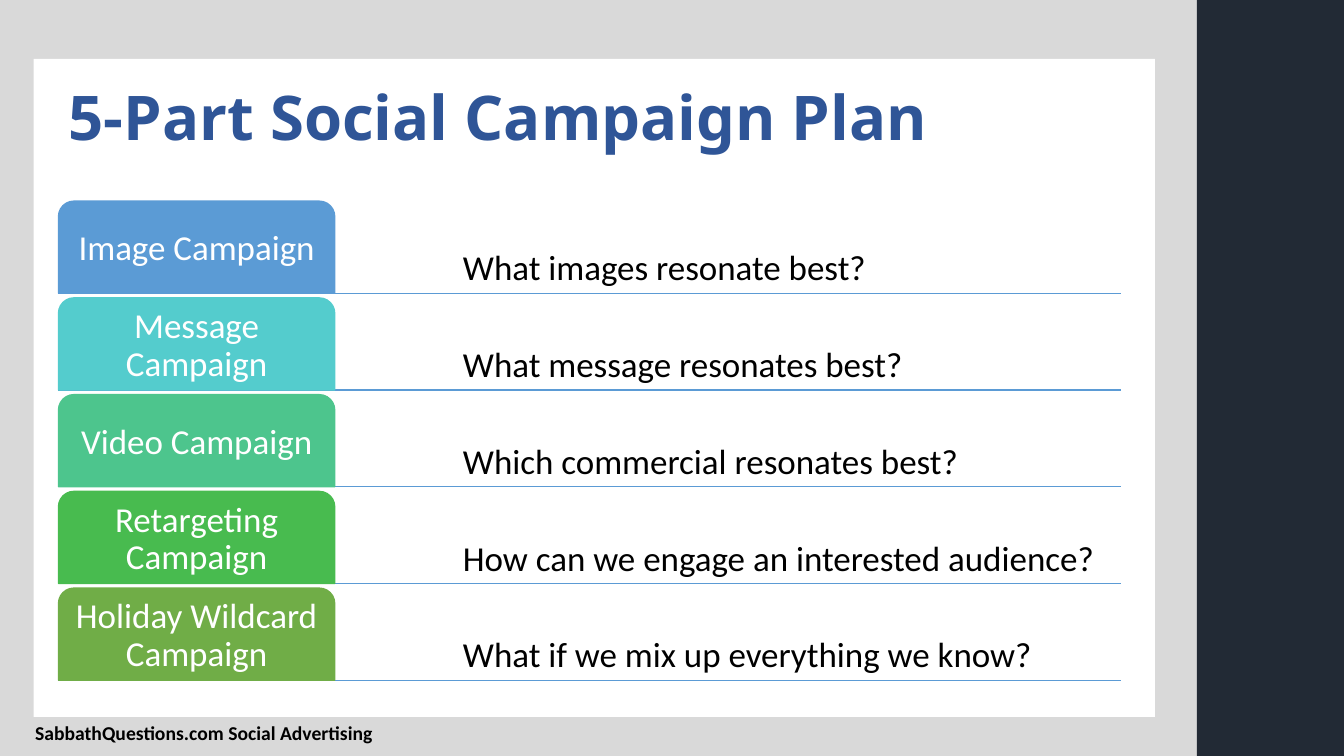
from lxml import etree
from pptx import Presentation
from pptx import util as u
from pptx.dml.color import RGBColor
from pptx.enum import shapes, text
from pptx.oxml import ns

BLACK = RGBColor(0x00, 0x00, 0x00)
WHITE = RGBColor(0xFF, 0xFF, 0xFF)
GRAY = RGBColor(0xD9, 0xD9, 0xD9)
NAVY = RGBColor(0x22, 0x2A, 0x35)
TITLE_BLUE = RGBColor(0x2F, 0x55, 0x97)
BLUE = RGBColor(0x5B, 0x9B, 0xD5)
CYAN = RGBColor(0x54, 0xCC, 0xCD)
TEAL = RGBColor(0x4D, 0xC5, 0x8D)
GREEN = RGBColor(0x48, 0xBB, 0x4F)
OLIVE = RGBColor(0x70, 0xAD, 0x47)

CAMPAIGNS = [
    ("Image Campaign", "What images resonate best?", BLUE),
    ("Message Campaign", "What message resonates best?", CYAN),
    ("Video Campaign", "Which commercial resonates best?", TEAL),
    ("Retargeting Campaign", "How can we engage an interested audience?", GREEN),
    ("Holiday Wildcard Campaign", "What if we mix up everything we know?", OLIVE),
]
LABEL_WIDTH = 197.3
ROW_GAP = 3.3
QUESTION_TAB = 88


def add_panel(slide, kind, box, color):
    """Add a filled shape without outline or shadow."""
    shape = slide.shapes.add_shape(kind, *map(u.Pt, box))
    shape.shadow.inherit = False
    shape.fill.solid()
    shape.fill.fore_color.rgb = color
    shape.line.fill.background()
    return shape


def write(shape, words, size, color, font="Calibri", bold=False, anchor=text.MSO_ANCHOR.TOP,
          align=text.PP_ALIGN.LEFT, spacing=1.0, inset=None, tab=None):
    """Put one run of text into a shape."""
    frame = shape.text_frame
    frame.word_wrap = True
    frame.vertical_anchor = anchor
    if inset is not None:
        frame.margin_left = frame.margin_right = u.Pt(inset)
        frame.margin_top = frame.margin_bottom = u.Pt(inset)
    paragraph = frame.paragraphs[0]
    paragraph.alignment = align
    paragraph.line_spacing = spacing
    if tab is not None:
        properties = paragraph._p.get_or_add_pPr()
        stops = etree.SubElement(properties, ns.qn("a:tabLst"))
        etree.SubElement(stops, ns.qn("a:tab"), pos=str(u.Pt(tab)), algn="l")
    run = paragraph.add_run()
    run.text = words
    run.font.name = font
    run.font.size = u.Pt(size)
    run.font.bold = bold
    run.font.color.rgb = color


def add_text(slide, box, words, size, color, **style):
    """Add a text box holding one run."""
    write(slide.shapes.add_textbox(*map(u.Pt, box)), words, size, color, **style)


def add_background(slide, box):
    """Draw the gray field, the white sheet and the dark side band."""
    left, top, width, height = box
    field = 855
    rectangle = shapes.MSO_SHAPE.RECTANGLE
    add_panel(slide, rectangle, (left, top, field, height), GRAY)
    add_panel(slide, rectangle, (left + 24, top + 42, 801, 470), WHITE)
    add_panel(slide, rectangle, (left + field, top, width - field, height), NAVY)


def add_rule(slide, left, right, y):
    """Draw the thin line under a row."""
    rule = slide.shapes.add_connector(
        shapes.MSO_CONNECTOR.STRAIGHT, u.Pt(left), u.Pt(y), u.Pt(right), u.Pt(y))
    rule.line.color.rgb = BLUE
    rule.line.width = u.Pt(1)
    etree.SubElement(rule._element.spPr, ns.qn("a:effectLst"))


def add_campaign(slide, box, name, question, color):
    """Draw one row: rule, question and colored label."""
    left, top, width, height = box
    add_rule(slide, left, left + width, top + height)
    add_text(slide, (left + LABEL_WIDTH, top, width - LABEL_WIDTH, height), "\t" + question,
             25, BLACK, anchor=text.MSO_ANCHOR.BOTTOM, spacing=0.9, inset=3.6, tab=QUESTION_TAB)
    label = add_panel(slide, shapes.MSO_SHAPE.ROUND_2_SAME_RECTANGLE,
                      (left, top, LABEL_WIDTH, height), color)
    label.line.color.rgb = color
    label.line.width = u.Pt(1)
    write(label, name, 25, WHITE, anchor=text.MSO_ANCHOR.MIDDLE,
          align=text.PP_ALIGN.CENTER, spacing=0.9, inset=3.6)


def add_campaign_list(slide, box):
    """Stack the campaign rows evenly in the box."""
    left, top, width, height = box
    pitch = (height + ROW_GAP) / len(CAMPAIGNS)
    for index, campaign in enumerate(CAMPAIGNS):
        row = (left, top + index * pitch, width, pitch - ROW_GAP)
        add_campaign(slide, row, *campaign)


def main():
    """Build and save the slide."""
    presentation = Presentation()
    presentation.slide_width = u.Pt(960)
    presentation.slide_height = u.Pt(540)
    slide = presentation.slides.add_slide(presentation.slide_layouts[6])
    add_background(slide, (0, 0, 960, 540))
    add_text(slide, (41.8, 41, 758.9, 90.7), "5-Part Social Campaign Plan", 44, TITLE_BLUE,
             font="Noto Sans", bold=True, anchor=text.MSO_ANCHOR.MIDDLE, spacing=0.9)
    add_campaign_list(slide, (41.8, 143.7, 758.9, 342.2))
    add_text(slide, (18, 511.2, 375.8, 24.2), "SabbathQuestions.com Social Advertising",
             14, BLACK, bold=True)
    presentation.save("out.pptx")


if __name__ == "__main__":
    main()
